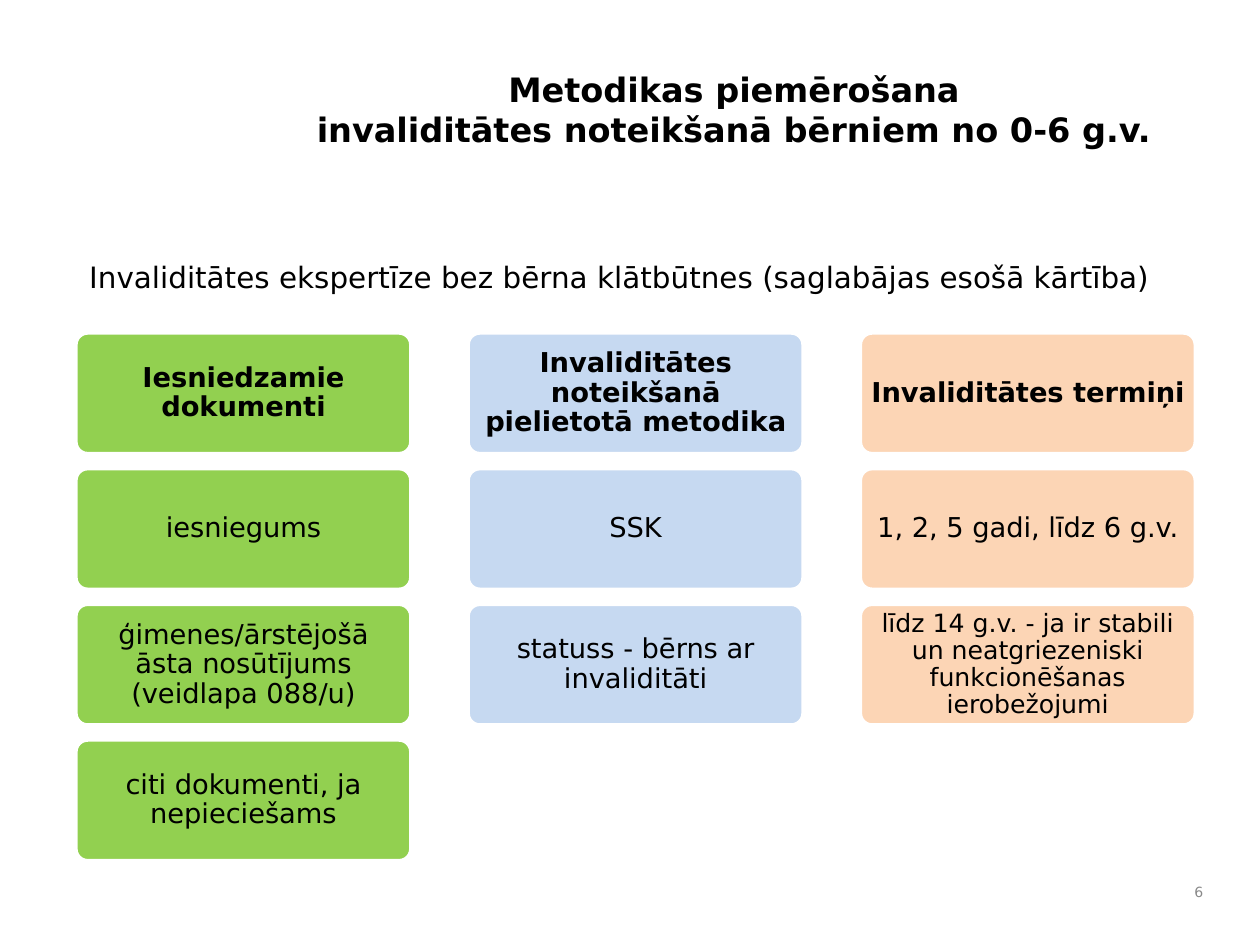
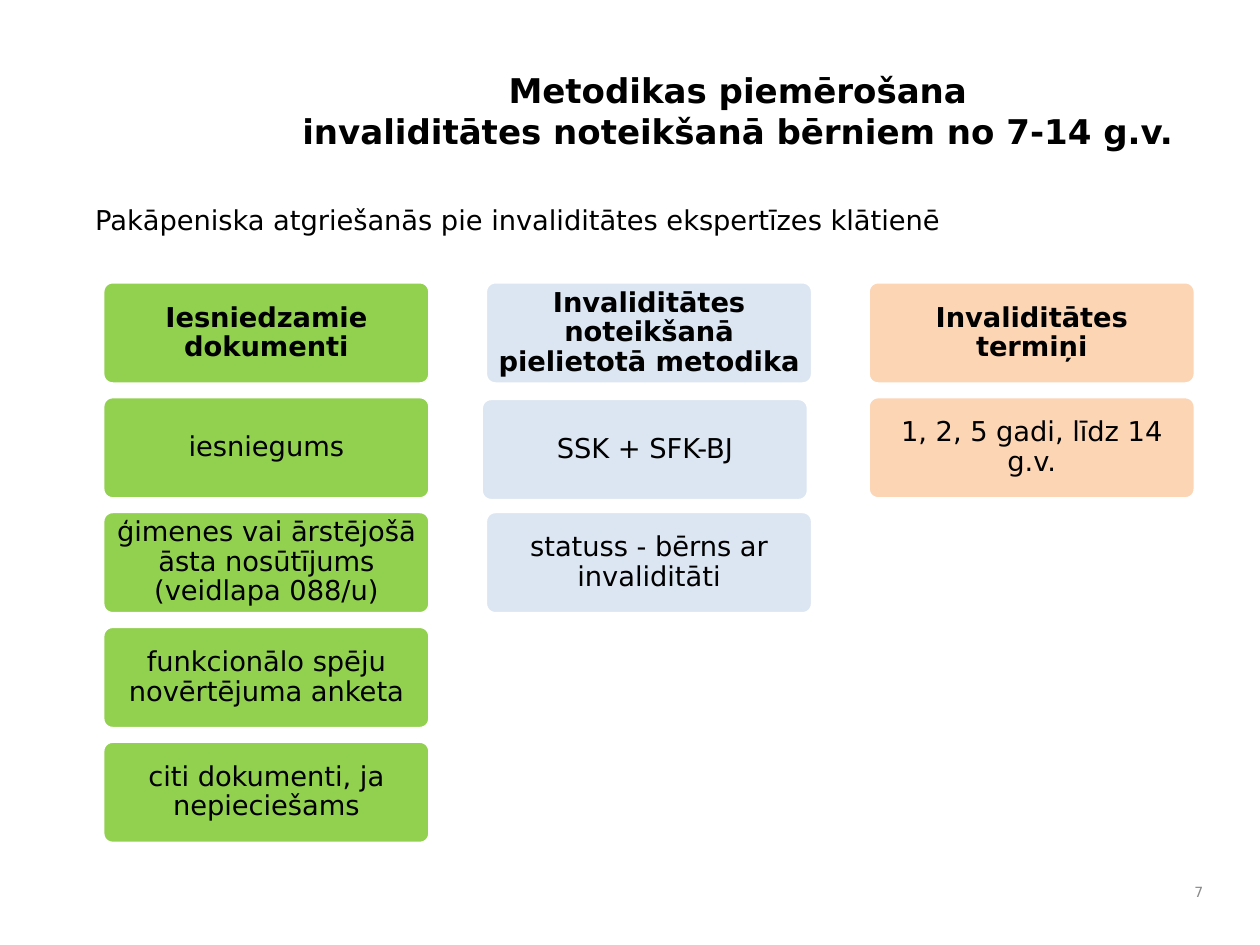
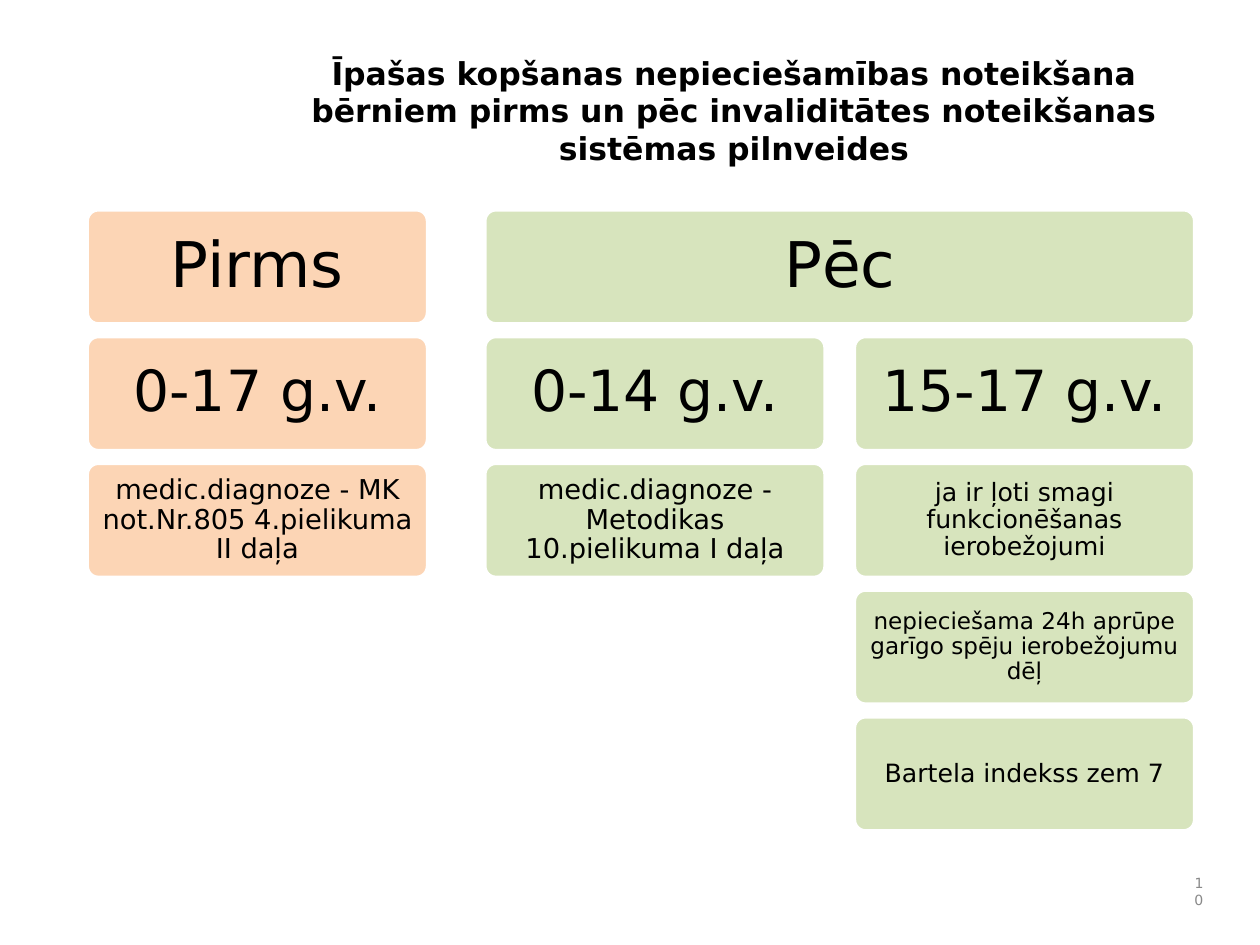
import copy

import pptx
import pptx.dml.color
import pptx.enum.shapes
import pptx.enum.text
import pptx.oxml.ns
import pptx.util

Cm = pptx.util.Cm
ALIGN = pptx.enum.text.PP_ALIGN
ANCHOR = pptx.enum.text.MSO_ANCHOR
FONT = "DejaVu Sans"
COLORS = {
    "text": "000000", "number": "898989", "outline": "FFFFFF",
    "green": "92D050", "blue": "C6D9F1", "pale_blue": "DCE6F2",
    "peach": "FCD5B5", "olive": "D7E4BD",
}


def rgb(name):
    return pptx.dml.color.RGBColor.from_string(COLORS[name])


def write(sp, text, size=13, bold=False, color="text", align=ALIGN.CENTER,
          anchor=ANCHOR.MIDDLE, inset=(0.25, 0.13), spacing=None):
    """Fill a shape with one paragraph; a newline becomes a line break."""
    tf = sp.text_frame
    tf.word_wrap = True
    tf.vertical_anchor = anchor
    tf.margin_left = tf.margin_right = Cm(inset[0])
    tf.margin_top = tf.margin_bottom = Cm(inset[1])
    p = tf.paragraphs[0]
    p.text = text
    p.alignment = align
    if spacing:
        p.line_spacing = spacing
    for r in p.runs:
        r.font.name = FONT
        r.font.size = pptx.util.Pt(size)
        r.font.bold = bold
        r.font.color.rgb = rgb(color)
    # Line breaks take the height of the text around them
    for br in p._p.findall(pptx.oxml.ns.qn("a:br")):
        br.append(copy.deepcopy(p.runs[0]._r.rPr))


def text_box(slide, box, text, **fmt):
    write(slide.shapes.add_textbox(*map(Cm, box)), text, **fmt)


def card(slide, box, text, fill, **fmt):
    sp = slide.shapes.add_shape(
        pptx.enum.shapes.MSO_SHAPE.ROUNDED_RECTANGLE, *map(Cm, box))
    sp.adjustments[0] = 0.1
    sp.shadow.inherit = False
    sp.fill.solid()
    sp.fill.fore_color.rgb = rgb(fill)
    sp.line.color.rgb = rgb("outline")
    sp.line.width = pptx.util.Pt(2)
    write(sp, text, inset=(0.13, 0.13), spacing=0.9, **fmt)


def column(slide, box, pitch, fill, cards):
    """Stack cards downwards from box; a card is (text, format, changes to box)."""
    left, top, width, height = box
    for row, (text, fmt, (dx, dy, dw)) in enumerate(cards):
        place = (left + dx, top + row * pitch + dy, width + dw, height)
        card(slide, place, text, fill, **fmt)


def item(text, dx=0, dy=0, dw=0, **fmt):
    return text, fmt, (dx, dy, dw)


def new_slide(prs, title, title_box, title_size, number):
    slide = prs.slides.add_slide(prs.slide_layouts[6])
    text_box(slide, title_box, title, size=title_size, bold=True)
    text_box(slide, (19.76, 14.63, 0.71, 0.71), number, size=6.7,
             color="number", align=ALIGN.RIGHT)
    return slide


def method_grid(slide, box, pitch, columns):
    """Equal columns, each with a bold heading card on top."""
    left, top, width, height = box
    for i, (fill, heading, cards) in enumerate(columns):
        column(slide, (left + i * pitch[0], top, width, height), pitch[1],
               fill, [item(heading, bold=True)] + cards)


HEADINGS = ("Iesniedzamie dokumenti",
            "Invaliditātes noteikšanā pielietotā metodika",
            "Invaliditātes termiņi")
STATUS = item("statuss - bērns ar invaliditāti")
REQUEST = item("iesniegums")
OTHER = item("citi dokumenti, ja nepieciešams")
METHOD_TITLE = "Metodikas piemērošana\ninvaliditātes noteikšanā bērniem no "


def ages_0_6(prs):
    slide = new_slide(prs, METHOD_TITLE + "0-6 g.v.",
                      (4.55, 0.89, 15.57, 1.88), 16, "6")
    text_box(slide, (1.25, 4.22, 18.5, 1.07),
             "Invaliditātes ekspertīze bez bērna klātbūtnes "
             "(saglabājas esošā kārtība)",
             size=14, align=ALIGN.LEFT, anchor=ANCHOR.TOP)
    documents = [REQUEST,
                 item("ģimenes/ārstējošā āsta nosūtījums (veidlapa 088/u)"),
                 OTHER]
    terms = [item("1, 2, 5 gadi, līdz 6 g.v."),
             item("līdz 14 g.v. - ja ir stabili un neatgriezeniski "
                  "funkcionēšanas ierobežojumi", size=12)]
    method_grid(slide, (1.27, 5.59, 5.64, 2.04), (6.59, 2.28), zip(
        ("green", "blue", "peach"), HEADINGS,
        (documents, [item("SSK"), STATUS], terms)))


def ages_7_14(prs):
    slide = new_slide(prs, METHOD_TITLE + "7-14 g.v.",
                      (4.7, 0.89, 15.39, 1.93), 16.2, "7")
    text_box(slide, (1.35, 3.28, 18.42, 1.45),
             "Pakāpeniska atgriešanās pie invaliditātes ekspertīzes klātienē",
             align=ALIGN.JUSTIFY, anchor=ANCHOR.TOP)
    documents = [REQUEST,
                 item("ģimenes vai ārstējošā āsta nosūtījums (veidlapa 088/u)"),
                 item("funkcionālo spēju novērtējuma anketa"),
                 OTHER]
    methods = [item("SSK + SFK-BJ", dx=-0.07, dy=0.03), STATUS]
    method_grid(slide, (1.72, 4.73, 5.51, 1.73), (6.43, 1.93), zip(
        ("green", "pale_blue", "peach"), HEADINGS,
        (documents, methods, [item("1, 2, 5 gadi, līdz 14 g.v.")])))


def special_care(prs):
    slide = new_slide(
        prs, "Īpašas kopšanas nepieciešamības noteikšana bērniem pirms un pēc "
        "invaliditātes noteikšanas sistēmas pilnveides",
        (4.55, 0.89, 15.57, 1.93), 15, "10")
    top, width, height, pitch = 3.52, 5.73, 1.93, 2.13
    before, after, after_older = 1.46, 8.14, 14.35
    # Before
    column(slide, (before, top, width, height), pitch, "peach", [
        item("Pirms", size=30),
        item("0-17 g.v.", size=27),
        item("medic.diagnoze - MK not.Nr.805 4.pielikuma II daļa")])
    # After: the heading spans both age groups
    column(slide, (after, top, width, height), pitch, "olive", [
        item("Pēc", size=30, dw=after_older - after),
        item("0-14 g.v.", size=27),
        item("medic.diagnoze - Metodikas 10.pielikuma I daļa")])
    column(slide, (after_older, top + pitch, width, height), pitch, "olive", [
        item("15-17 g.v.", size=27),
        item("ja ir ļoti smagi funkcionēšanas ierobežojumi", size=12),
        item("nepieciešama 24h aprūpe garīgo spēju ierobežojumu dēļ", size=11),
        item("Bartela indekss zem 7", size=12)])


def main():
    prs = pptx.Presentation()
    prs.slide_width, prs.slide_height = Cm(21.17), Cm(15.88)
    ages_0_6(prs)
    ages_7_14(prs)
    special_care(prs)
    prs.save("out.pptx")


if __name__ == "__main__":
    main()
